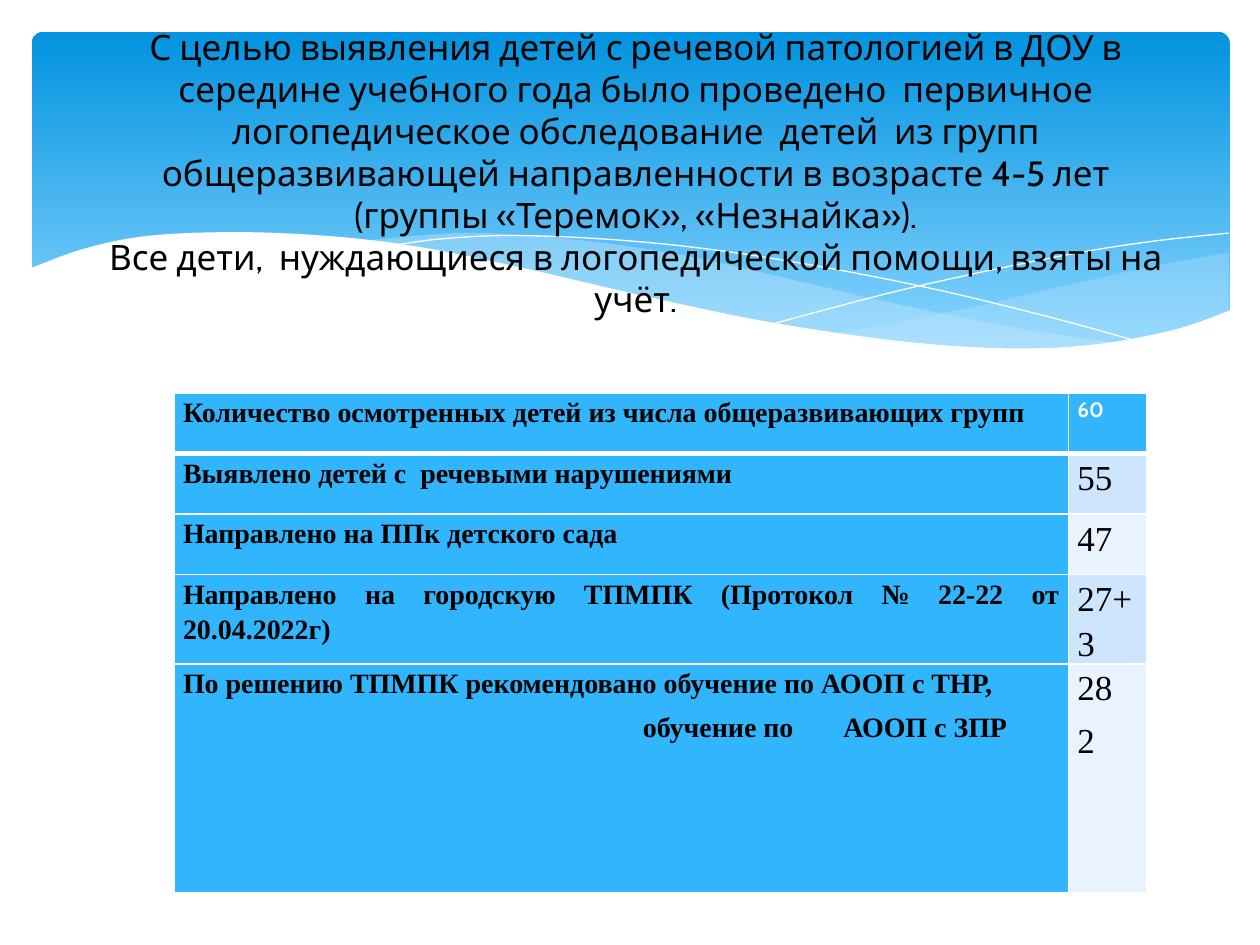
from lxml import etree
from pptx import Presentation
from pptx import util as u
from pptx.dml.color import RGBColor
from pptx.enum import shapes, text
from pptx.oxml.ns import qn

WHITE = RGBColor(0xFF, 0xFF, 0xFF)
BLACK = RGBColor(0, 0, 0)
DEEP = RGBColor(0x02, 0x93, 0xE0)
SKY = RGBColor(0x83, 0xD3, 0xFE)
FOAM = RGBColor(0xC6, 0xE7, 0xFC)
BLUE = RGBColor(0x31, 0xB6, 0xFD)
BANDS = RGBColor(0xE8, 0xF3, 0xFF), RGBColor(0xCE, 0xE5, 0xFE)
SERIF, SANS = "Times New Roman", "Cabin"

# Wave knots in cm from the corner of the panel
CREST = [
    [(24.13, 4.45), (22.76, 4.7), (21.23, 5.03), (19.15, 5.51), (17.3, 5.89), (16.15, 6.1)],
    [(16.15, 6.1), (17.27, 6.25), (18.59, 6.38), (20.04, 6.43), (21.51, 6.32),
     (22.76, 6.1), (24.13, 5.64)],
]
SWELL = [
    [(22.05, 6.3), (19.86, 5.97), (17.3, 5.46), (15.34, 5), (13.46, 4.57),
     (11.79, 4.29), (10.03, 4.11), (8.53, 4.06), (6.63, 4.22)],
    [(6.63, 4.22), (8.56, 4.52), (10.77, 5), (13.74, 5.66), (16.26, 6.12),
     (18.36, 6.38), (20.14, 6.43), (22.05, 6.3)],
]
FALL = [[(7.21, 4.32), (8.33, 4.17), (9.93, 4.11), (12.32, 4.24), (14.81, 4.55),
         (17.83, 5.11), (20.47, 5.74), (22.4, 6.27)]]
RISE = [[(14.94, 5.89), (17.65, 5.18), (20.6, 4.55), (22.48, 4.24), (24.13, 4.06)]]
SHORE = [
    [(24.18, 5.61), (22.99, 6.02), (21.29, 6.32), (19.51, 6.38), (17.35, 6.22),
     (14.68, 5.82), (12.14, 5.28), (9.98, 4.78), (8, 4.37), (6.25, 4.14),
     (4.27, 4.04), (2.39, 4.11), (1.07, 4.37), (-0.05, 4.78)],
    [(-0.05, 7.72), (24.18, 7.72)],
]
TITLE = [
    "С целью выявления детей с речевой патологией в ДОУ в середине учебного года "
    "было проведено  первичное логопедическое обследование  детей  из групп "
    "общеразвивающей направленности в возрасте 4-5 лет",
    "(группы «Теремок», «Незнайка»).",
    "Все дети,  нуждающиеся в логопедической помощи, взяты на учёт.",
]
ROWS = [
    (["Количество осмотренных детей из числа общеразвивающих групп"], ["60"]),
    (["Выявлено детей с  речевыми нарушениями"], ["55"]),
    (["Направлено на ППк детского сада"], ["47"]),
    (["Направлено на городскую ТПМПК (Протокол № 22-22 от 20.04.2022г)"], ["27+3"]),
    (["По решению ТПМПК рекомендовано обучение по АООП с ТНР,",
      "\tобучение по\tАООП с ЗПР"], ["28", "2"]),
]
TABS = 9.27, 13.31
LABEL = {"name": SERIF, "size": u.Pt(16), "bold": True}
COUNT = {"name": SERIF, "size": u.Pt(20), "bold": False}
HEAD = {"name": SANS, "size": u.Pt(12), "bold": True}


def apply(item, form):
    for key, val in form.items():
        setattr(item, key, val)


def smooth(knots, steps=6):
    """Sample a Catmull-Rom curve that passes through the knots."""
    ends = [knots[0], *knots, knots[-1]]
    dots = [knots[0]]
    for a, b, c, d in zip(ends, ends[1:], ends[2:], ends[3:]):
        for t in (i / steps for i in range(1, steps + 1)):
            dots.append(tuple(
                (2 * q + (r - p) * t + (2 * p - 5 * q + 4 * r - s) * t ** 2
                 + (3 * q - p - 3 * r + s) * t ** 3) / 2
                for p, q, r, s in zip(a, b, c, d)))
    return dots


def wave(slide, left, top, curves, fill=None, alpha=100):
    """Draw a filled wave, or a white hairline when there is no fill."""
    dots = [(u.Cm(left + x), u.Cm(top + y))
            for curve in curves for x, y in smooth(curve)]
    pen = slide.shapes.build_freeform(*dots[0])
    pen.add_line_segments(dots[1:], close=fill is not None)
    shape = pen.convert_to_shape()
    shape.shadow.inherit = False
    if fill is None:
        shape.fill.background()
        shape.line.color.rgb = WHITE
        shape.line.width = u.Pt(0)
        return
    shape.line.fill.background()
    shape.fill.solid()
    shape.fill.fore_color.rgb = fill
    if alpha < 100:
        color = shape.fill._xPr.find(".//" + qn("a:srgbClr"))
        etree.SubElement(color, qn("a:alpha"), val=str(alpha * 1000))


def banner(slide, left, top, width, height):
    panel = slide.shapes.add_shape(
        shapes.MSO_SHAPE.ROUNDED_RECTANGLE, *map(u.Cm, (left, top, width, height)))
    panel.adjustments[0] = 0.034
    panel.shadow.inherit = False
    panel.line.fill.background()
    panel.fill.gradient()
    panel.fill.gradient_angle = 270
    for stop, color, place in zip(panel.fill.gradient_stops, (DEEP, SKY), (0, 0.9)):
        stop.color.rgb = color
        stop.position = place
    for curves, fill, alpha in ((CREST, FOAM, 29), (SWELL, FOAM, 40), (FALL, None, 100),
                                (RISE, None, 100), (SHORE, WHITE, 100)):
        wave(slide, left, top, curves, fill, alpha)


def write(frame, lines, form, font, color):
    for i, line in enumerate(lines):
        para = frame.paragraphs[0] if i == 0 else frame.add_paragraph()
        para.text = line
        apply(para, form)
        if "\t" in line:
            stops = etree.SubElement(para._p.get_or_add_pPr(), qn("a:tabLst"))
            for pos in TABS:
                etree.SubElement(stops, qn("a:tab"), pos=str(u.Cm(pos)), algn="l")
        apply(para.font, font)
        para.font.color.rgb = color


def title(slide, left, top, width, height):
    frame = slide.shapes.add_textbox(*map(u.Cm, (left, top, width, height))).text_frame
    apply(frame, {"word_wrap": True, "margin_top": 0, "margin_bottom": 0,
                  "vertical_anchor": text.MSO_ANCHOR.TOP})
    write(frame, TITLE, {"alignment": text.PP_ALIGN.CENTER, "line_spacing": u.Pt(24)},
          {"name": SANS, "size": u.Pt(20)}, BLACK)


def border(cell, widths):
    props = cell._tc.get_or_add_tcPr()
    for i, (side, width) in enumerate(zip("LRTB", widths)):
        line = etree.Element(qn("a:ln" + side), w=str(u.Pt(width)))
        fill = etree.SubElement(line, qn("a:solidFill"))
        etree.SubElement(fill, qn("a:srgbClr"), val=str(WHITE))
        props.insert(i, line)


def table(slide, left, top, widths, heights):
    grid = slide.shapes.add_table(
        len(heights), len(widths),
        *map(u.Cm, (left, top, sum(widths), sum(heights)))).table
    for col, width in zip(grid.columns, widths):
        col.width = u.Cm(width)
    for r, (row, height) in enumerate(zip(grid.rows, heights)):
        row.height = u.Cm(height)
        for c, cell in enumerate(row.cells):
            apply(cell, {"margin_left": u.Cm(0.18), "margin_right": u.Cm(0.18),
                         "margin_top": 0, "margin_bottom": 0})
            cell.fill.solid()
            cell.fill.fore_color.rgb = BANDS[r % 2] if r and c else BLUE
            border(cell, (1, 1, 3 if r == 1 else 1, 1 if r else 3))
            font = LABEL if c == 0 else COUNT if r else HEAD
            write(cell.text_frame, ROWS[r][c],
                  {"alignment": text.PP_ALIGN.JUSTIFY, "line_spacing": 1.15,
                   "space_after": u.Pt(4.8)},
                  font, WHITE if font is HEAD else BLACK)


def main():
    deck = Presentation()
    deck.slide_width, deck.slide_height = u.Cm(25.4), u.Cm(19.05)
    slide = deck.slides.add_slide(deck.slide_layouts[6])
    banner(slide, 0.64, 0.64, 24.15, 6.86)
    table(slide, 3.51, 7.92, (18.03, 1.58), (1.22,) * 4 + (4.62,))
    title(slide, 1.5, 0.52, 22.63, 5.93)
    deck.save("out.pptx")


if __name__ == "__main__":
    main()
